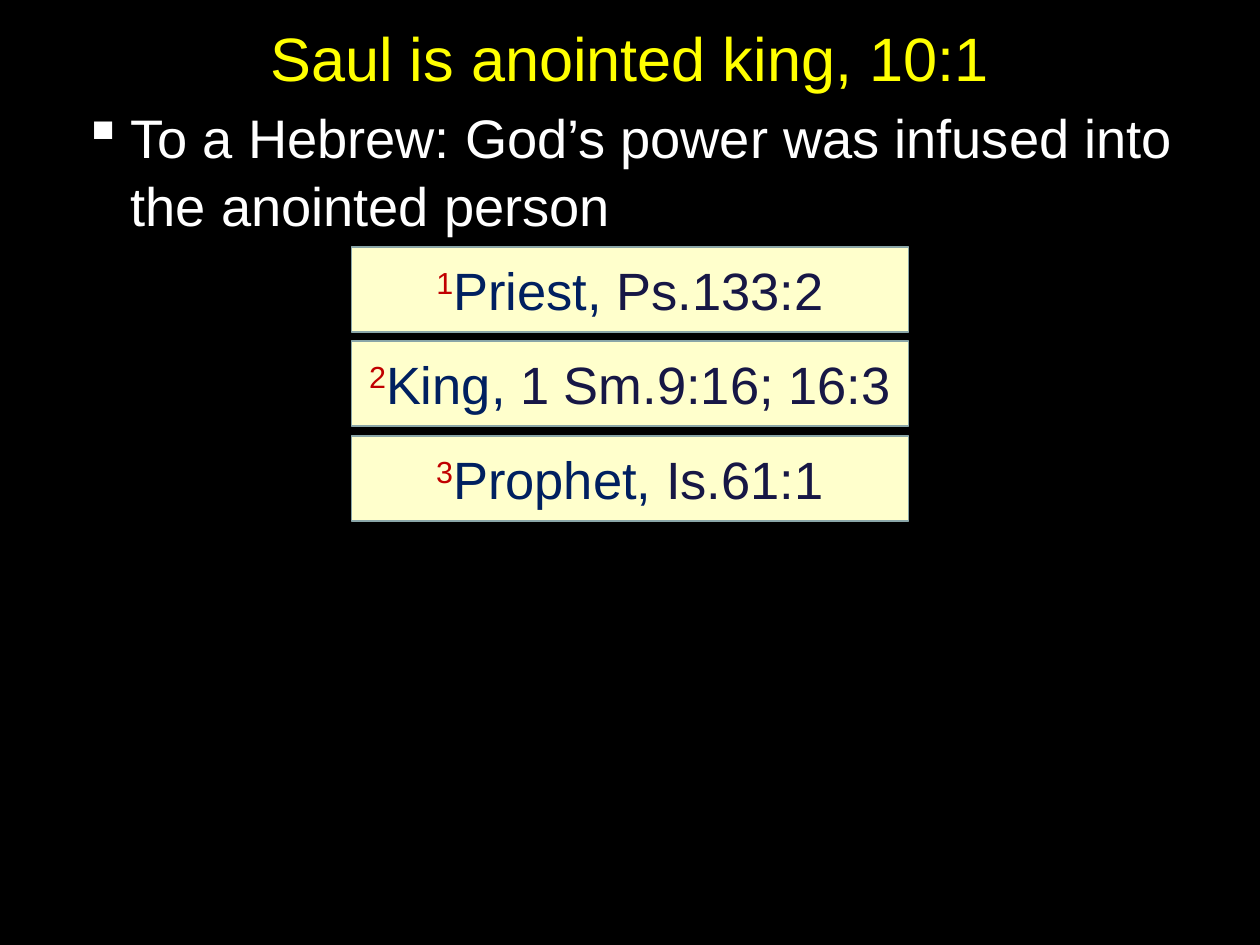
import pptx
import pptx.dml.color
import pptx.enum.shapes
import pptx.enum.text
import pptx.util
from lxml import etree

COLOURS = {
    "background": "000000",
    "title": "FFFF00",
    "body": "FFFFFF",
    "card": "FFFFCC",
    "border": "8AA6A8",
    "number": "C00000",
    "office": "002060",
    "verse": "171745",
}
OFFICES = [
    ("Priest,", " Ps.133:2"),
    ("King,", " 1 Sm.9:16; 16:3"),
    ("Prophet,", " Is.61:1"),
]
ALIGN = pptx.enum.text.PP_ALIGN
ANCHOR = pptx.enum.text.MSO_ANCHOR


def colour(name):
    return pptx.dml.color.RGBColor.from_string(COLOURS[name])


def write(paragraph, text, *, size, ink, font="Arial", raised=0):
    """Add a run; raised is the superscript offset in percent."""
    run = paragraph.add_run()
    run.text = text
    run.font.name = font
    run.font.size = pptx.util.Pt(size)
    run.font.color.rgb = colour(ink)
    if raised:
        run.font._element.set("baseline", str(raised * 1000))


class Slide:
    title_size, body_size, card_size = 35, 31, 30

    def __init__(self, deck):
        self.width, self.height = deck.slide_width, deck.slide_height
        self.page = deck.slides.add_slide(deck.slide_layouts[6])
        self.page.background.fill.solid()
        self.page.background.fill.fore_color.rgb = colour("background")

    def place(self, left, top, width, height):
        """Turn shares of the slide's size into lengths."""
        return (round(left * self.width), round(top * self.height),
                round(width * self.width), round(height * self.height))

    def frame(self, share, anchor):
        frame = self.page.shapes.add_textbox(*self.place(*share)).text_frame
        frame.word_wrap = True
        frame.vertical_anchor = anchor
        return frame.paragraphs[0]

    def title(self, text, share):
        heading = self.frame(share, ANCHOR.MIDDLE)
        heading.alignment = ALIGN.CENTER
        write(heading, text, size=self.title_size, ink="title")

    def bullet(self, text, share):
        point = self.frame(share, ANCHOR.TOP)
        point.line_spacing = 1.05
        point.space_before = pptx.util.Pt(2)
        properties = point._p.get_or_add_pPr()
        indent = pptx.util.Inches(0.38)
        properties.set("marL", str(indent))
        properties.set("indent", str(-indent))
        mark = etree.SubElement(properties, pptx.oxml.ns.qn("a:buChar"))
        mark.set("char", "▪")
        write(point, text, size=self.body_size, ink="body")

    def card(self, number, office, verse, share):
        box = self.page.shapes.add_shape(
            pptx.enum.shapes.MSO_SHAPE.RECTANGLE, *self.place(*share))
        box.shadow.inherit = False
        box.fill.solid()
        box.fill.fore_color.rgb = colour("card")
        box.line.color.rgb = colour("border")
        box.line.width = pptx.util.Pt(1)
        box.text_frame.word_wrap = True
        box.text_frame.vertical_anchor = ANCHOR.MIDDLE
        label = box.text_frame.paragraphs[0]
        label.alignment = ALIGN.CENTER
        write(label, str(number), size=self.card_size, ink="number", raised=30)
        write(label, office, size=self.card_size, ink="office")
        write(label, verse, size=self.card_size, ink="verse")


def main():
    deck = pptx.Presentation()
    deck.slide_width = pptx.util.Inches(10)
    deck.slide_height = pptx.util.Inches(7.5)
    slide = Slide(deck)
    slide.title("Saul is anointed king, 10:1", (0.05, 0.01, 0.9, 0.1))
    slide.bullet("To a Hebrew: God’s power was infused into the anointed person",
                 (0.056, 0.1, 0.887, 0.82))
    card_width, card_height, first_top, pitch = 0.442, 0.09, 0.261, 0.1
    for row, (office, verse) in enumerate(OFFICES):
        slide.card(row + 1, office, verse,
                   ((1 - card_width) / 2, first_top + row * pitch,
                    card_width, card_height))
    deck.save("out.pptx")


if __name__ == "__main__":
    main()
